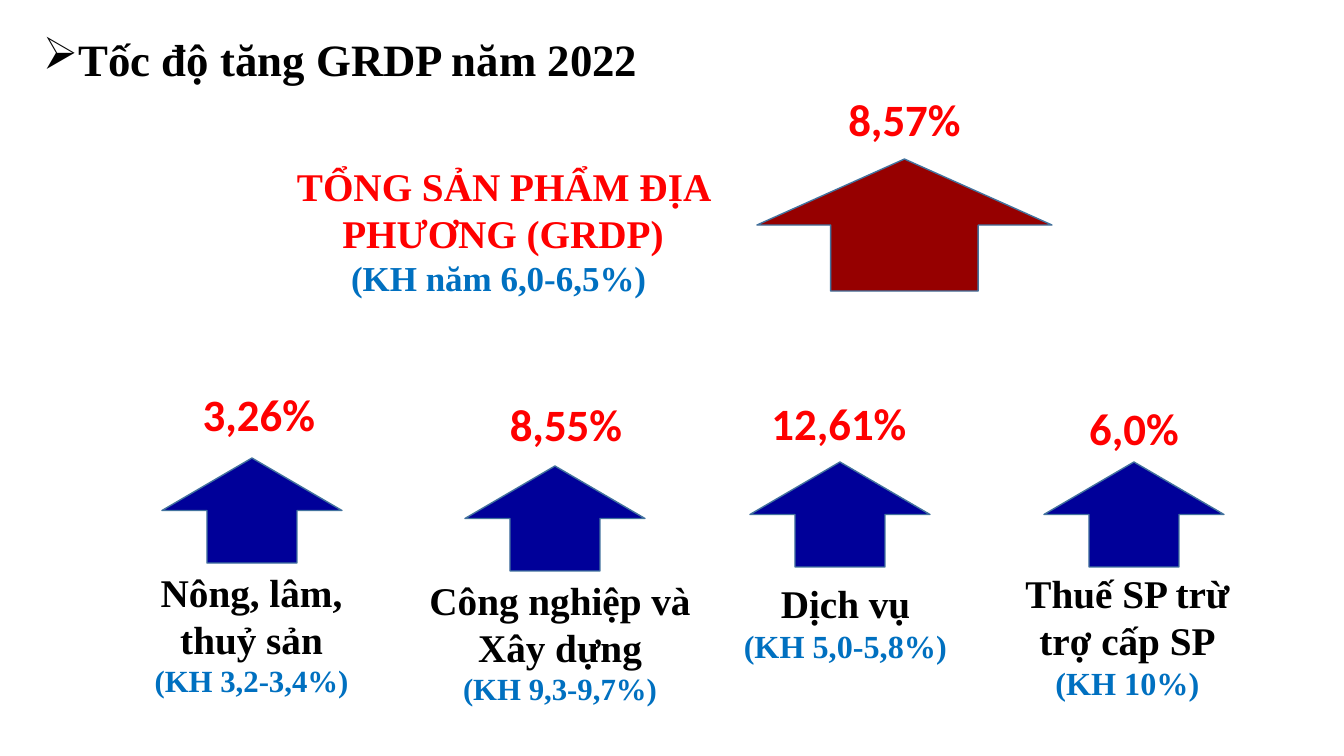
from pptx import Presentation
from pptx.dml.color import RGBColor
from pptx.enum.shapes import MSO_SHAPE
from pptx.enum.text import PP_ALIGN
from pptx.oxml.xmlchemy import OxmlElement
from pptx.util import Emu, Pt

PX = 914400 / 100.8
BLACK = RGBColor(0x00, 0x00, 0x00)
RED = RGBColor(0xFF, 0x00, 0x00)
DARK_RED = RGBColor(0x96, 0x00, 0x00)
NAVY = RGBColor(0x00, 0x00, 0x99)
PLAN_BLUE = RGBColor(0x00, 0x70, 0xC0)
OUTLINE = RGBColor(0x43, 0x73, 0x9E)
SERIF, SANS = "Times New Roman", "Calibri"


def px(value):
    return Emu(round(value * PX))


class GrowthSlide:
    def __init__(self, deck):
        self.slide = deck.slides.add_slide(deck.slide_layouts[6])

    def text(self, box, lines, font=SERIF, align=PP_ALIGN.CENTER):
        """Add a text box; each line is (words, points, colour)."""
        frame = self.slide.shapes.add_textbox(*map(px, box)).text_frame
        frame.word_wrap = True
        for i, (words, points, color) in enumerate(lines):
            paragraph = frame.add_paragraph() if i else frame.paragraphs[0]
            paragraph.alignment = align
            run = paragraph.add_run()
            run.text = words
            style = {"name": font, "size": Pt(points), "bold": True}
            for key, value in style.items():
                setattr(run.font, key, value)
            run.font.color.rgb = color
        return frame

    def title(self, box, words):
        frame = self.text(box, [(words, 32, BLACK)], align=PP_ALIGN.JUSTIFY)
        heading = frame.paragraphs[0]
        heading.space_before = Pt(4.3)
        properties = heading._p.get_or_add_pPr()
        for key, value in {"marL": px(6), "indent": px(-56)}.items():
            properties.set(key, str(value))
        bullet = OxmlElement("a:buChar")
        bullet.set("char", "➢")
        properties.append(bullet)

    def rate(self, box, words):
        self.text(box, [(words, 32, RED)], font=SANS)

    def arrow(self, left, top, width, height, color):
        """Add an upward arrow: a right arrow turned about its centre."""
        shift = (width - height) / 2
        arrow = self.slide.shapes.add_shape(
            MSO_SHAPE.RIGHT_ARROW,
            px(left + shift), px(top - shift), px(height), px(width))
        arrow.rotation = 270
        arrow.shadow.inherit = False
        arrow.fill.solid()
        arrow.fill.fore_color.rgb = color
        arrow.line.color.rgb = OUTLINE
        arrow.line.width = Pt(1)


# Sectors: rate and its box, arrow corner, name, plan, plan size, label box
SECTORS = [
    ("3,26%", (188, 382, 142, 65), (162, 458),
     "Nông, lâm, thuỷ sản", "(KH 3,2-3,4%)", 22, (139, 563, 225, 148)),
    ("8,55%", (498, 392, 136, 65), (465, 466),
     "Công nghiệp và Xây dựng", "(KH 9,3-9,7%)", 22, (404, 571, 312, 148)),
    ("12,61%", (756, 391, 166, 65), (750, 462),
     "Dịch vụ", "(KH 5,0-5,8%)", 23, (732, 574, 227, 97)),
    ("6,0%", (1067, 396, 134, 65), (1044, 462),
     "Thuế SP trừ trợ cấp SP", "(KH 10%)", 23, (988, 564, 279, 144)),
]


def main():
    deck = Presentation()
    deck.slide_width, deck.slide_height = px(1344), px(756)
    growth = GrowthSlide(deck)

    # Heading
    growth.title((33, 27, 1270, 65), "Tốc độ tăng GRDP năm 2022")

    # Total product
    growth.text((248, 157, 510, 147), [
        ("TỔNG SẢN PHẨM ĐỊA PHƯƠNG (GRDP)", 28, RED),
        ("(KH năm 6,0-6,5%) ", 25, PLAN_BLUE)])
    growth.arrow(757, 159, 295, 132, DARK_RED)
    growth.rate((810, 87, 189, 65), "8,57%")

    # Four sectors
    for rate, rate_box, corner, name, plan, plan_size, label_box in SECTORS:
        growth.rate(rate_box, rate)
        growth.arrow(*corner, 180, 105, NAVY)
        growth.text(label_box, [(name, 28, BLACK),
                                (plan, plan_size, PLAN_BLUE)])

    deck.save("out.pptx")


if __name__ == "__main__":
    main()
